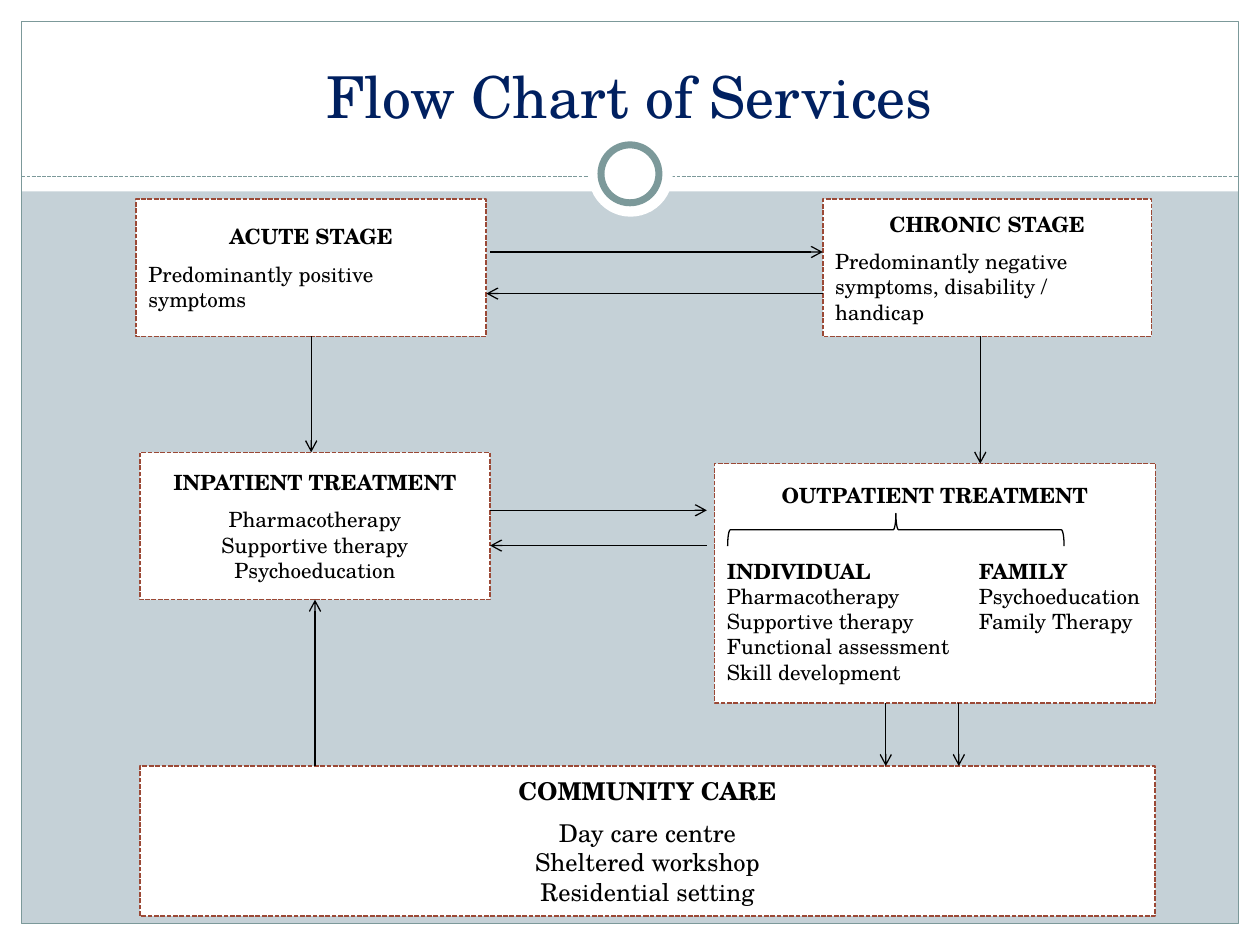
import pptx
import pptx.util
import pptx.dml.color
import pptx.enum.dml
import pptx.enum.shapes
import pptx.enum.text
import pptx.oxml.ns
import lxml.etree

PX = 9144  # EMU in one px, at 100 px to the inch
WIDTH, HEIGHT = 1000, 750
FONT = "TeX Gyre Schola"

RGBColor = pptx.dml.color.RGBColor
WHITE = RGBColor(0xFF, 0xFF, 0xFF)
BLACK = RGBColor(0x00, 0x00, 0x00)
NAVY = RGBColor(0x00, 0x20, 0x60)
SAGE = RGBColor(0x7C, 0x99, 0x9A)
RUST = RGBColor(0x9B, 0x49, 0x36)
MIST = RGBColor(0xC5, 0xD1, 0xD7)

Shape = pptx.enum.shapes.MSO_SHAPE
Align = pptx.enum.text.PP_ALIGN
Anchor = pptx.enum.text.MSO_ANCHOR
DASH = pptx.enum.dml.MSO_LINE.SQUARE_DOT
qn = pptx.oxml.ns.qn


def set_all(target, values):
    for name, value in values.items():
        setattr(target, name, value)


def place(shape, box):
    set_all(shape, dict(zip(("left", "top", "width", "height"), (v * PX for v in box))))


def set_line(line, color, points, dash=None):
    line.color.rgb = color
    set_all(line, {"width": pptx.util.Pt(points), "dash_style": dash})


def add_shape(slide, kind, box, fill=None, line=None):
    """Add a preset shape; line is (colour, points) or (colour, points, dash)."""
    shape = slide.shapes.add_shape(kind, *(v * PX for v in box))
    shape.shadow.inherit = False
    if fill is None:
        shape.fill.background()
    else:
        shape.fill.solid()
        shape.fill.fore_color.rgb = fill
    if line is None:
        shape.line.fill.background()
    else:
        set_line(shape.line, *line)
    return shape


def add_line(slide, start, end, color, dash=None, arrow=False):
    connector = slide.shapes.add_connector(
        pptx.enum.shapes.MSO_CONNECTOR.STRAIGHT, *(v * PX for v in start + end))
    set_line(connector.line, color, 0.75, dash)
    properties = connector.element.find(qn("p:spPr"))
    if arrow:
        lxml.etree.SubElement(properties.find(qn("a:ln")), qn("a:tailEnd"), type="arrow")
    lxml.etree.SubElement(properties, qn("a:effectLst"))


def add_tab_stop(shape, position):
    """Set one left tab stop, in px from the text edge, in every paragraph."""
    for properties in shape.element.iter(qn("a:pPr")):
        stops = lxml.etree.SubElement(properties, qn("a:tabLst"))
        lxml.etree.SubElement(stops, qn("a:tab"), pos=str(position * PX), algn="l")


def write(paragraph, text, size, color=BLACK, bold=False, align=Align.LEFT, after=0):
    set_all(paragraph, {"alignment": align, "space_before": pptx.util.Pt(0),
                        "space_after": pptx.util.Pt(after)})
    run = paragraph.add_run()
    run.text = text
    set_all(run.font, {"name": FONT, "size": pptx.util.Pt(size), "bold": bold})
    run.font.color.rgb = color


def draw_frame(slide, box):
    """White margins and header band, thin border, dashed rule and ring."""
    left, top, width, height = box
    right, bottom = left + width, top + height
    rule, middle = top + 123, left + width // 2
    for band in ((0, bottom, WIDTH, HEIGHT - bottom), (0, 0, WIDTH, rule + 12),
                 (0, 0, left, HEIGHT), (right, 0, WIDTH - right, HEIGHT)):
        add_shape(slide, Shape.RECTANGLE, band, WHITE)
    add_shape(slide, Shape.RECTANGLE, box, line=(SAGE, 0.75))
    add_line(slide, (left, rule), (right, rule), SAGE, DASH)
    for size, line in ((67, None), (46, (SAGE, 4))):
        ring = (middle - size // 2, rule - 2 - size // 2, size, size)
        add_shape(slide, Shape.OVAL, ring, WHITE, line)


def draw_title(slide, box, text):
    title = slide.shapes.title
    place(title, box)
    set_all(title.text_frame, {"vertical_anchor": Anchor.BOTTOM, "word_wrap": True,
                               "auto_size": pptx.enum.text.MSO_AUTO_SIZE.NONE})
    write(title.text_frame.paragraphs[0], text, 33, NAVY, align=Align.CENTER)
    title.element.getparent().append(title.element)  # in front of the header band


def draw_card(slide, box, heading, lines, align=Align.CENTER, size=12, gap=7, bold_lines=0):
    """Dashed box with a bold heading; the first bold_lines lines are bold too."""
    card = add_shape(slide, Shape.RECTANGLE, box, WHITE, (RUST, 0.9, DASH))
    frame = card.text_frame
    set_all(frame, {"word_wrap": True, "vertical_anchor": Anchor.MIDDLE})
    write(frame.paragraphs[0], heading, size, bold=True, align=Align.CENTER, after=gap)
    for number, line in enumerate(lines):
        write(frame.add_paragraph(), line, size, bold=number < bold_lines, align=align)
    return card


def draw_outpatient(slide, box):
    card = draw_card(slide, box, "OUTPATIENT TREATMENT",
                     ["INDIVIDUAL\tFAMILY", "Pharmacotherapy\tPsychoeducation",
                      "Supportive therapy\tFamily Therapy", "Functional assessment",
                      "Skill development"], Align.LEFT, gap=29, bold_lines=1)
    add_tab_stop(card, 200)
    left, top = box[:2]
    brace = add_shape(slide, Shape.LEFT_BRACE, (left + 131, top - 81, 26, 267),
                      line=(BLACK, 0.75))
    brace.rotation = 90


def draw_arrows(slide, acute, chronic, inpatient, outpatient, community):
    acute_right, inpatient_right = acute[0] + acute[2], inpatient[0] + inpatient[2]
    acute_bottom, chronic_bottom, inpatient_bottom, outpatient_bottom = (
        box[1] + box[3] for box in (acute, chronic, inpatient, outpatient))
    before_outpatient = outpatient[0] - 6
    for start, end in (
            ((acute_right + 3, 200), (chronic[0], 200)),
            ((chronic[0], 233), (acute_right, 233)),
            ((inpatient_right, 405), (before_outpatient, 405)),
            ((before_outpatient, 433), (inpatient_right, 433)),
            ((247, acute_bottom), (247, inpatient[1])),
            ((778, chronic_bottom), (778, outpatient[1])),
            ((250, community[1]), (250, inpatient_bottom)),
            ((703, outpatient_bottom), (703, community[1])),
            ((761, outpatient_bottom), (761, community[1]))):
        add_line(slide, start, end, BLACK, arrow=True)


def main():
    presentation = pptx.Presentation()
    set_all(presentation, {"slide_width": WIDTH * PX, "slide_height": HEIGHT * PX})
    slide = presentation.slides.add_slide(presentation.slide_layouts[5])
    slide.background.fill.solid()
    slide.background.fill.fore_color.rgb = MIST

    acute, chronic = (108, 158, 278, 109), (653, 158, 261, 109)
    inpatient, outpatient = (111, 359, 278, 117), (567, 368, 350, 190)
    community = (111, 608, 806, 119)

    draw_frame(slide, (17, 17, 966, 716))
    draw_title(slide, (33, 25, 933, 83), "Flow Chart of Services")
    draw_card(slide, acute, "ACUTE STAGE", ["Predominantly positive symptoms"], Align.LEFT)
    draw_card(slide, chronic, "CHRONIC STAGE",
              ["Predominantly negative symptoms, disability / handicap"], Align.LEFT)
    draw_card(slide, inpatient, "INPATIENT TREATMENT",
              ["Pharmacotherapy", "Supportive therapy", "Psychoeducation"])
    draw_outpatient(slide, outpatient)
    draw_card(slide, community, "COMMUNITY CARE",
              ["Day care centre", "Sheltered workshop", "Residential setting"], size=14)
    draw_arrows(slide, acute, chronic, inpatient, outpatient, community)
    presentation.save("out.pptx")


if __name__ == "__main__":
    main()
